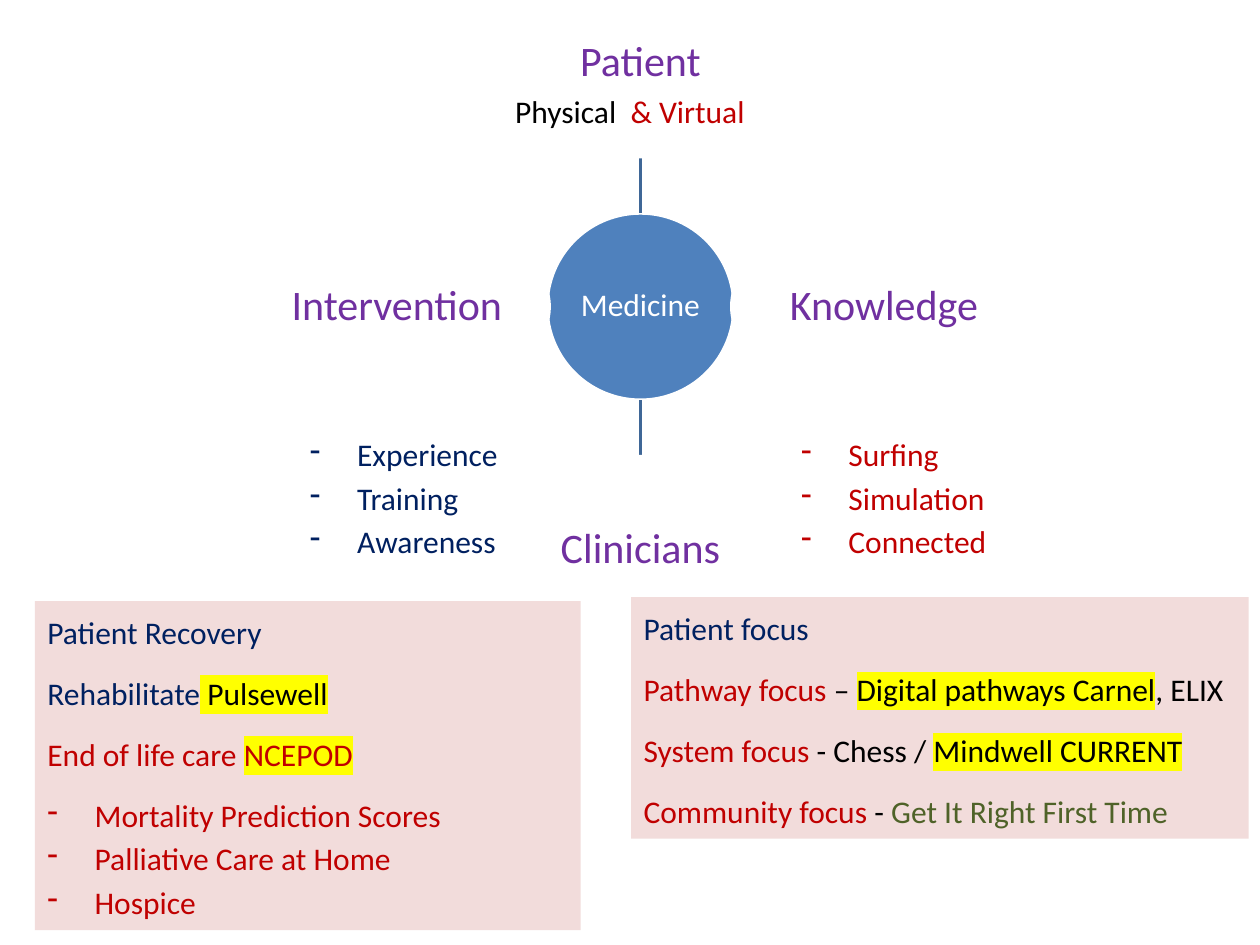
from lxml.etree import SubElement
from pptx import Presentation
from pptx.dml.color import RGBColor
from pptx.enum.shapes import MSO_CONNECTOR, MSO_SHAPE
from pptx.enum.text import MSO_ANCHOR, PP_ALIGN
from pptx.oxml.ns import qn
from pptx.util import Pt

BLACK, WHITE, NAVY, RED = "000000", "FFFFFF", "002060", "C00000"
PURPLE, GREEN, BLUE, STEEL = "7030A0", "4F6228", "4F81BD", "3F6797"
PINK, YELLOW = "F2DCDB", "FFFF00"


def rgb(value):
    return RGBColor.from_string(value)


class Board:
    font = "Calibri"
    size = 18
    heading_size = 24
    indent = 27

    def __init__(self, slide):
        self.slide = slide

    def paragraph(self, frame, runs, first=False, size=size, align=PP_ALIGN.LEFT,
                  spacing=1.15, after=0, dash=False):
        para = frame.paragraphs[0] if first else frame.add_paragraph()
        para.alignment = align
        para.line_spacing = spacing
        para.space_after = Pt(after)
        if dash:
            props = para._p.get_or_add_pPr()
            props.set("marL", str(Pt(self.indent)))
            props.set("indent", str(-Pt(self.indent)))
            SubElement(props, qn("a:buChar"), char="-")
        para.font.name = self.font
        para.font.size = Pt(size)
        shared = len({color for _, color, *_ in runs}) == 1
        if shared:
            para.font.color.rgb = rgb(runs[0][1])
        for words, color, *marker in runs:
            run = para.add_run()
            run.text = words
            if not shared:
                run.font.color.rgb = rgb(color)
            if marker:
                highlight = SubElement(run._r.get_or_add_rPr(), qn("a:highlight"))
                SubElement(highlight, qn("a:srgbClr"), val=marker[0])

    def passage(self, frame, lines, dashes=(), spacing=1.15, after=10):
        frame.word_wrap = True
        frame.vertical_anchor = MSO_ANCHOR.TOP
        for index, runs in enumerate(lines):
            self.paragraph(frame, runs, index == 0, spacing=spacing, after=after)
        for index, runs in enumerate(dashes):
            last = index == len(dashes) - 1
            self.paragraph(frame, runs, not lines and index == 0,
                           spacing=spacing, after=after if last else 0, dash=True)

    def text(self, left, top, width, height, lines=(), dashes=(), **style):
        box = self.slide.shapes.add_textbox(Pt(left), Pt(top), Pt(width), Pt(height))
        self.passage(box.text_frame, lines, dashes, **style)

    def panel(self, left, top, width, height, lines, dashes=()):
        panel = self.slide.shapes.add_shape(
            MSO_SHAPE.RECTANGLE, Pt(left), Pt(top), Pt(width), Pt(height))
        panel.shadow.inherit = False
        panel.fill.solid()
        panel.fill.fore_color.rgb = rgb(PINK)
        panel.line.fill.background()
        self.passage(panel.text_frame, lines, dashes)

    def ellipse(self, x, y, width, height, fill, label, color, size):
        ellipse = self.slide.shapes.add_shape(
            MSO_SHAPE.OVAL, Pt(x - width / 2), Pt(y - height / 2), Pt(width), Pt(height))
        ellipse.shadow.inherit = False
        ellipse.fill.solid()
        ellipse.fill.fore_color.rgb = rgb(fill)
        ellipse.line.color.rgb = rgb(WHITE)
        ellipse.line.width = Pt(2)
        frame = ellipse.text_frame
        frame.word_wrap = True
        frame.vertical_anchor = MSO_ANCHOR.MIDDLE
        frame.margin_left = frame.margin_right = Pt(1)
        frame.margin_top = frame.margin_bottom = Pt(1)
        self.paragraph(frame, [(label, color)], True, size, PP_ALIGN.CENTER, 0.9)

    def link(self, x, start, end):
        link = self.slide.shapes.add_connector(
            MSO_CONNECTOR.STRAIGHT, Pt(x), Pt(start), Pt(x), Pt(end))
        link.line.color.rgb = rgb(STEEL)
        link.line.width = Pt(2)
        SubElement(link._element.spPr, qn("a:effectLst"))


def main():
    deck = Presentation()
    deck.slide_width, deck.slide_height = Pt(720), Pt(540)
    board = Board(deck.slides.add_slide(deck.slide_layouts[6]))

    hub_x, hub_y, hub_size = 366, 175.2, 107
    reach, topic_width = 139.2, 174
    board.ellipse(hub_x, hub_y, hub_size, hub_size, BLUE, "Medicine", WHITE, board.size)
    for topic, across, down in [("Patient", 0, -1), ("Knowledge", 1, 0),
                                ("Clinicians", 0, 1), ("Intervention", -1, 0)]:
        if down:
            board.link(hub_x, hub_y + down * hub_size / 2,
                       hub_y + down * (reach - hub_size / 2))
        board.ellipse(hub_x + across * reach, hub_y + down * reach, topic_width,
                      hub_size, WHITE, topic, PURPLE, board.heading_size)

    board.text(287.3, 49, 147.6, 29, [[("Physical  ", BLACK), ("& Virtual", RED)]],
               spacing=1, after=0)
    for left, width, height, color, skills in [
            (170, 164, 114.5, NAVY, ("Experience", "Training", "Awareness")),
            (450.7, 147.6, 83, RED, ("Surfing", "Simulation", "Connected"))]:
        board.text(left, 242, width, height, dashes=[[(skill, color)] for skill in skills])

    board.panel(360.7, 341.3, 352.8, 138, [
        [("Patient focus", NAVY)],
        [("Pathway focus", RED), (" – ", BLACK),
         ("Digital pathways Carnel", BLACK, YELLOW), (", ELIX", BLACK)],
        [("System focus", RED), (" - Chess / ", BLACK),
         ("Mindwell CURRENT", BLACK, YELLOW)],
        [("Community focus", RED), (" - ", BLACK), ("Get It Right First Time", GREEN)],
    ])
    board.panel(20, 343.5, 311.8, 188, [
        [("Patient Recovery", NAVY)],
        [("Rehabilitate", NAVY), (" Pulsewell", BLACK, YELLOW)],
        [("End of life care ", RED), ("NCEPOD", RED, YELLOW)],
    ], [[(care, RED)] for care in
        ("Mortality Prediction Scores", "Palliative Care at Home", "Hospice")])

    deck.save("out.pptx")


if __name__ == "__main__":
    main()
